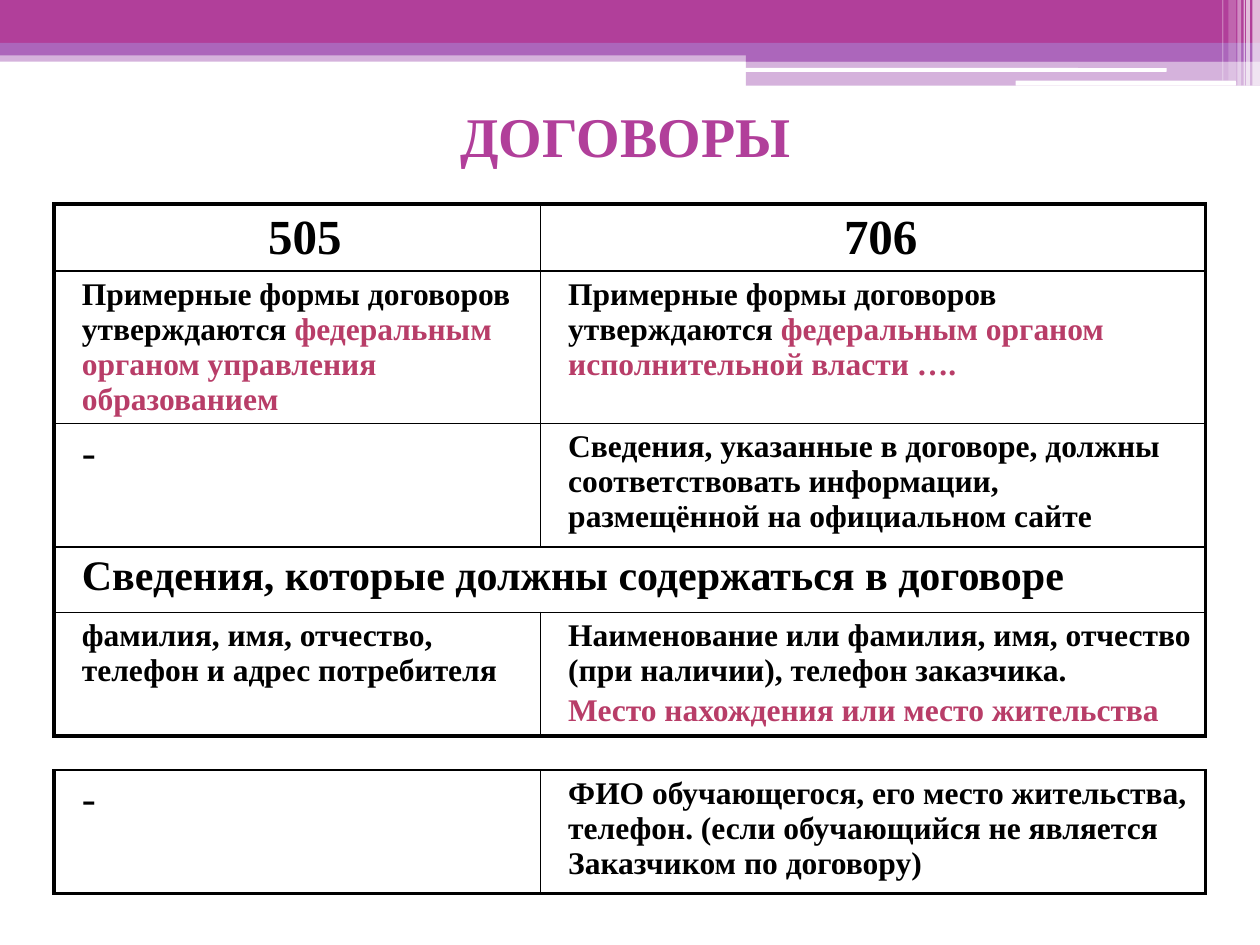
from lxml import etree
from pptx import Presentation
from pptx.dml.color import RGBColor
from pptx.enum.shapes import MSO_SHAPE
from pptx.enum.text import MSO_ANCHOR, PP_ALIGN
from pptx.oxml.ns import qn
from pptx.util import Inches, Pt

RECT, ROUND = MSO_SHAPE.RECTANGLE, MSO_SHAPE.ROUNDED_RECTANGLE
LEFT, CENTER = PP_ALIGN.LEFT, PP_ALIGN.CENTER
MIDDLE = MSO_ANCHOR.MIDDLE

THEME = {
    "font": "Times New Roman",
    "magenta": "B13F9A", "violet": "AC66BB", "white": "FFFFFF",
    "text": "000000", "accent": "B83D68",
    "title": 32, "header": 28, "section": 24, "body": 18,
    "outer": 2.25, "inner": 1,
}

BANDS = [
    (RECT, 0, 0.4, 10, 0.09, "violet", 50),
    (RECT, 0, 0, 10, 0.34, "magenta", 100),
    (RECT, 0, 0.34, 10, 0.1, "violet", 100),
    (RECT, 5.92, 0.39, 4.08, 0.1, "violet", 100),
    (RECT, 5.92, 0.48, 4.08, 0.2, "violet", 50),
    (ROUND, 5.91, 0.54, 3.35, 0.03, "white", 100),
    (ROUND, 8.06, 0.64, 1.75, 0.04, "white", 100),
    (RECT, 9.94, 0, 0.06, 0.68, "white", 65),
    (RECT, 9.89, 0, 0.03, 0.68, "white", 65),
    (RECT, 9.87, 0, 0.01, 0.68, "white", 60),
    (RECT, 9.82, 0, 0.03, 0.68, "white", 40),
    (RECT, 9.75, 0, 0.06, 0.64, "white", 20),
    (RECT, 9.7, 0, 0.01, 0.64, "white", 30),
]

TITLE = "ДОГОВОРЫ"
FORMS = "Примерные формы договоров утверждаются "

HEADER = {"size": "header", "bold": True, "align": CENTER}
BODY = {"size": "body", "bold": True, "align": LEFT}
SECTION = {"size": "section", "bold": True, "align": LEFT}
DASH = {"size": "section", "bold": False, "align": LEFT}

NO_RULE = (DASH, [[("-", "text")]])
TABLE_LEFT = 0.43
COLUMNS = [3.86, 5.28]
TABLES = [
    {"top": 1.62, "top_line": "outer", "rows": [
        (0.53, [(HEADER, [[("505", "text")]]), (HEADER, [[("706", "text")]])]),
        (1.21, [
            (BODY, [[(FORMS, "text"),
                     ("федеральным органом управления образованием", "accent")]]),
            (BODY, [[(FORMS, "text"),
                     ("федеральным органом исполнительной власти ….", "accent")]]),
        ]),
        (0.98, [
            NO_RULE,
            (BODY, [[("Сведения, указанные в договоре, должны соответствовать "
                      "информации, размещённой на официальном сайте", "text")]]),
        ]),
        (0.52, [(SECTION, [[("Сведения, которые должны содержаться в договоре", "text")]])]),
        (0.98, [
            (BODY, [[("фамилия, имя, отчество, телефон и адрес потребителя", "text")]]),
            (BODY, [[("Наименование или фамилия, имя, отчество (при наличии), "
                      "телефон заказчика.", "text")],
                    [("Место нахождения или место жительства", "accent")]]),
        ]),
    ]},
    {"top": 6.11, "top_line": "inner", "rows": [
        (0.98, [
            NO_RULE,
            (BODY, [[("ФИО обучающегося, его место жительства, телефон. (если "
                      "обучающийся не является Заказчиком по договору)", "text")]]),
        ]),
    ]},
]


def color(name):
    return RGBColor.from_string(THEME[name])


def add_run(paragraph, text, size, bold, tint):
    run = paragraph.add_run()
    run.text = text
    values = {"name": THEME["font"], "size": Pt(THEME[size]), "bold": bold}
    for key, value in values.items():
        setattr(run.font, key, value)
    run.font.color.rgb = color(tint)


def add_band(slide, kind, left, top, width, height, tint, opacity):
    band = slide.shapes.add_shape(kind, *map(Inches, (left, top, width, height)))
    band.shadow.inherit = False
    band.line.fill.background()
    band.fill.solid()
    band.fill.fore_color.rgb = color(tint)
    if opacity < 100:
        tint_xml = next(band.fill._xPr.iter(qn("a:srgbClr")))
        etree.SubElement(tint_xml, qn("a:alpha"), val=str(opacity * 1000))


def add_borders(cell, lines):
    properties = cell._tc.get_or_add_tcPr()
    for side, weight in lines.items():
        line = etree.SubElement(properties, qn(f"a:ln{side}"), w=str(Pt(THEME[weight])))
        fill = etree.SubElement(line, qn("a:solidFill"))
        etree.SubElement(fill, qn("a:srgbClr"), val=THEME["text"])


def fill_cell(cell, style, paragraphs):
    frame = cell.text_frame
    for index, runs in enumerate(paragraphs):
        paragraph = frame.add_paragraph() if index else frame.paragraphs[0]
        paragraph.alignment = style["align"]
        paragraph.space_before = Pt(3)
        paragraph._p.get_or_add_pPr().set("marL", str(Inches(0.12)))
        for text, tint in runs:
            add_run(paragraph, text, style["size"], style["bold"], tint)


def add_contract_table(slide, top, top_line, rows):
    heights = [height for height, _ in rows]
    table = slide.shapes.add_table(
        len(rows), len(COLUMNS), Inches(TABLE_LEFT), Inches(top),
        Inches(sum(COLUMNS)), Inches(sum(heights))).table
    table.first_row = table.horz_banding = False
    for column, width in zip(table.columns, COLUMNS):
        column.width = Inches(width)
    last_row, last_column = len(rows) - 1, len(COLUMNS) - 1
    for r, (height, cells) in enumerate(rows):
        table.rows[r].height = Inches(height)
        merged = len(cells) < len(COLUMNS)
        if merged:
            table.cell(r, 0).merge(table.cell(r, last_column))
        for c, (style, paragraphs) in enumerate(cells):
            cell = table.cell(r, c)
            fill_cell(cell, style, paragraphs)
            add_borders(cell, {
                "L": "outer" if c == 0 else "inner",
                "R": "outer" if merged or c == last_column else "inner",
                "T": top_line if r == 0 else "inner",
                "B": "outer" if r == last_row else "inner",
            })
        for cell in table.rows[r].cells:
            cell.fill.background()


def main():
    deck = Presentation()
    deck.slide_width, deck.slide_height = Inches(10), Inches(7.5)
    slide = deck.slides.add_slide(deck.slide_layouts[5])
    for band in BANDS:
        add_band(slide, *band)
    title = slide.shapes.title
    place = {"left": 0.35, "top": 0.68, "width": 9.23, "height": 0.79}
    for key, value in place.items():
        setattr(title, key, Inches(value))
    title.text_frame.vertical_anchor = MIDDLE
    heading = title.text_frame.paragraphs[0]
    heading.alignment = CENTER
    add_run(heading, TITLE, "title", True, "magenta")
    for contract_table in TABLES:
        add_contract_table(slide, **contract_table)
    deck.save("out.pptx")


if __name__ == "__main__":
    main()
